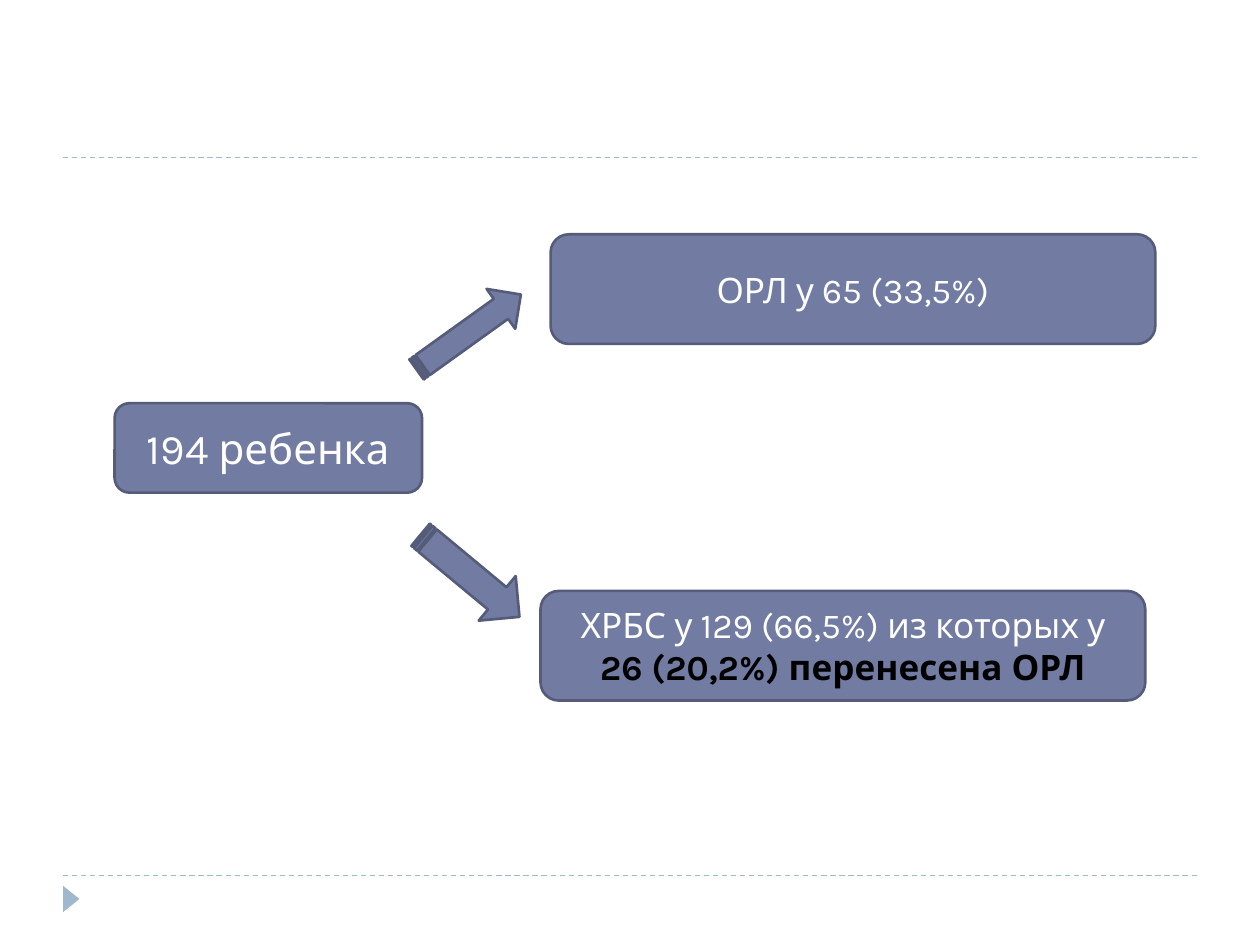
from dataclasses import dataclass

from lxml.etree import SubElement
from pptx import Presentation
from pptx.dml.color import RGBColor
from pptx.enum.dml import MSO_LINE
from pptx.enum.shapes import MSO_CONNECTOR, MSO_SHAPE
from pptx.enum.text import MSO_ANCHOR, PP_ALIGN
from pptx.oxml.ns import qn
from pptx.util import Inches, Pt


@dataclass(frozen=True)
class Theme:
    font: str = "Karla"
    fill: str = "727CA3"
    edge: str = "545C79"
    pale: str = "9FB8CD"
    light: str = "FFFFFF"
    dark: str = "000000"
    large: int = 24
    body: int = 20
    rule: float = 0.75
    border: float = 1.5


class Chart:
    def __init__(self, slide, theme):
        self.slide = slide
        self.theme = theme

    def rule(self, y):
        line = self.slide.shapes.add_connector(
            MSO_CONNECTOR.STRAIGHT, Inches(0.5), Inches(y), Inches(9.5), Inches(y))
        line.line.color.rgb = RGBColor.from_string(self.theme.pale)
        line.line.width = Pt(self.theme.rule)
        line.line.dash_style = MSO_LINE.DASH
        SubElement(line._element.spPr, qn("a:effectLst"))

    def shape(self, kind, area, fill, edge=None, turn=0):
        shape = self.slide.shapes.add_shape(kind, *map(Inches, area))
        shape.shadow.inherit = False
        shape.rotation = turn
        shape.fill.solid()
        shape.fill.fore_color.rgb = RGBColor.from_string(fill)
        if edge:
            shape.line.color.rgb = RGBColor.from_string(edge)
            shape.line.width = Pt(self.theme.border)
        else:
            shape.line.fill.background()
        return shape

    def marker(self, *area):
        self.shape(MSO_SHAPE.ISOSCELES_TRIANGLE, area, self.theme.pale, turn=90)

    def arrow(self, area, turn):
        self.shape(MSO_SHAPE.STRIPED_RIGHT_ARROW, area,
                   self.theme.fill, self.theme.edge, turn)

    def box(self, area, text, size, strong=""):
        theme = self.theme
        shape = self.shape(MSO_SHAPE.ROUNDED_RECTANGLE, area, theme.fill, theme.edge)
        frame = shape.text_frame
        frame.word_wrap = True
        frame.vertical_anchor = MSO_ANCHOR.MIDDLE
        para = frame.paragraphs[0]
        para.alignment = PP_ALIGN.CENTER
        para.font.name = theme.font
        para.font.size = Pt(size)
        para.font.color.rgb = RGBColor.from_string(theme.light)
        para.add_run().text = text
        if strong:
            run = para.add_run()
            run.text = strong
            run.font.bold = True
            run.font.color.rgb = RGBColor.from_string(theme.dark)


def main():
    deck = Presentation()
    deck.slide_width, deck.slide_height = Inches(10), Inches(7.5)
    theme = Theme()
    chart = Chart(deck.slides.add_slide(deck.slide_layouts[6]), theme)

    # Page frame
    for y in (6.95, 1.25):
        chart.rule(y)
    chart.marker(0.46, 7.07, 0.21, 0.13)

    # Whole group and its two parts
    chart.box((0.91, 3.2, 2.44, 0.71), "194 ребенка", theme.large)
    chart.box((4.37, 1.86, 4.8, 0.87), "ОРЛ у 65 (33,5%)", theme.body)
    chart.box((4.29, 4.69, 4.8, 0.87), "ХРБС у 129 (66,5%) из которых у ",
              theme.body, "26 (20,2%) перенесена ОРЛ")

    # Arrows to the parts
    chart.arrow((3.22, 4.34, 1.02, 0.46), 39.7)
    chart.arrow((3.21, 2.44, 1.02, 0.39), 324.3)

    deck.save("out.pptx")


if __name__ == "__main__":
    main()
